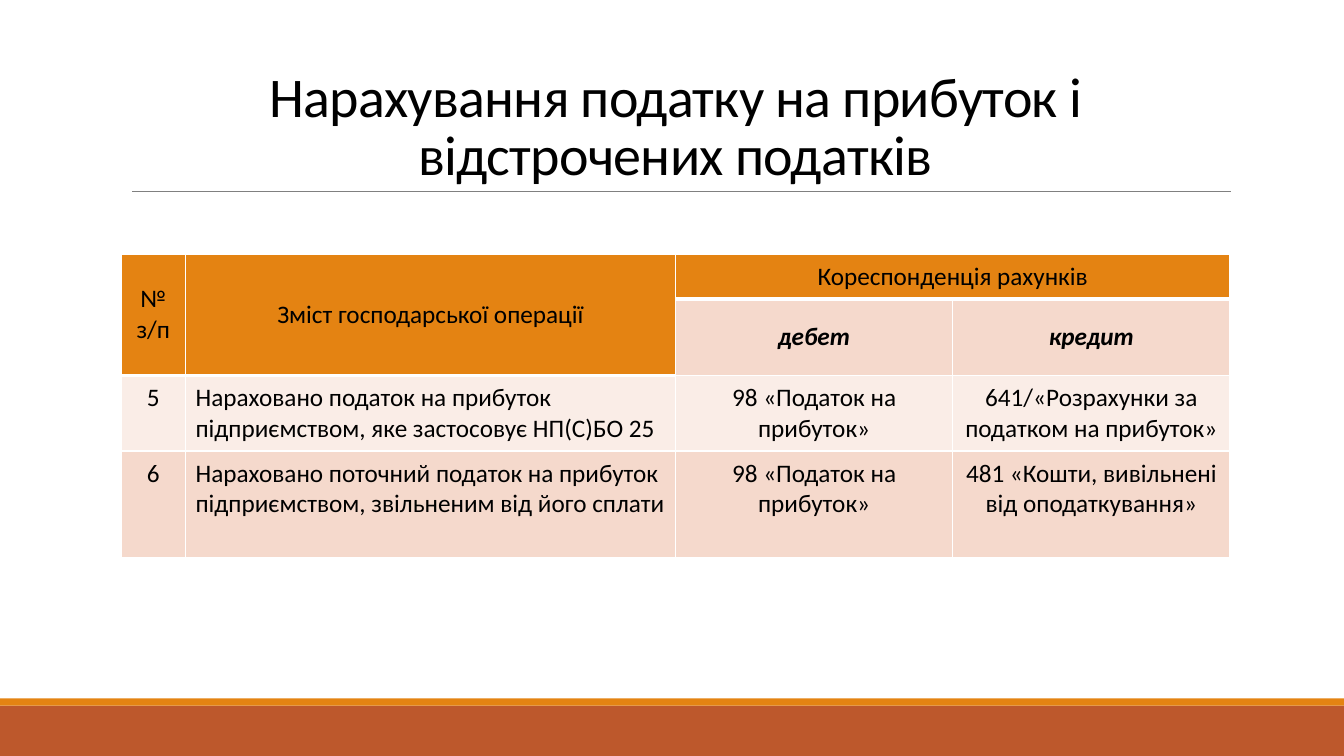
import pptx
import pptx.util
import pptx.dml.color
import pptx.enum.shapes
import pptx.enum.text
import pptx.oxml.ns
import lxml.etree

inch, pt = pptx.util.Inches, pptx.util.Pt
align, anchor = pptx.enum.text.PP_ALIGN, pptx.enum.text.MSO_ANCHOR
qn = pptx.oxml.ns.qn
wide, high = 13.33, 7.5
left, span = 1.2, 11
hues = {"rust": "BD582C", "gold": "E48312", "gray": "808080", "ink": "000000",
        "white": "FFFFFF", "rose": "F5D9CC", "pale": "FAEDE7"}


def tint(name):
    return pptx.dml.color.RGBColor.from_string(hues[name])


def write(para, text, size, side):
    para.alignment = side
    run = para.add_run()
    run.text = text
    run.font.name = "Calibri"
    run.font.size = pt(size)
    run.font.color.rgb = tint("ink")
    return run


deck = pptx.Presentation()
deck.slide_width, deck.slide_height = inch(wide), inch(high)
slide = deck.slides.add_slide(deck.slide_layouts[5])

# Bands at the foot
for top, tall, hue in [(7, 0.5, "rust"), (6.93, 0.07, "gold")]:
    band = slide.shapes.add_shape(pptx.enum.shapes.MSO_SHAPE.RECTANGLE,
                                  0, inch(top), inch(wide), inch(tall))
    band.shadow.inherit = False
    band.fill.solid()
    band.fill.fore_color.rgb = tint(hue)
    band.line.fill.background()

# Rule under the title
rule = slide.shapes.add_connector(pptx.enum.shapes.MSO_CONNECTOR.STRAIGHT,
                                  inch(1.31), inch(1.9), inch(12.21), inch(1.9))
rule.line.color.rgb = tint("gray")
rule.line.width = pt(0.5)
lxml.etree.SubElement(rule.element.spPr, qn("a:effectLst"))

# Title
title = slide.shapes.title
title.left, title.top, title.width, title.height = map(inch, (left, 0.31, span, 1.59))
frame = title.text_frame
frame.word_wrap = True
frame.auto_size = pptx.enum.text.MSO_AUTO_SIZE.NONE
frame.vertical_anchor = anchor.BOTTOM
frame.paragraphs[0].line_spacing = 0.85
run = write(frame.paragraphs[0], "Нарахування податку на прибуток і відстрочених податків",
            40, align.CENTER)
run.font._element.set("spc", "-50")

# Table of entries
rows = [
    ["№ з/п", "Зміст господарської операції", "Кореспонденція рахунків", ""],
    ["", "", "дебет", "кредит"],
    ["5", "Нараховано податок на прибуток підприємством, яке застосовує НП(С)БО 25",
     "98 «Податок на прибуток»", "641/«Розрахунки за податком на прибуток»"],
    ["6", "Нараховано поточний податок на прибуток підприємством, звільненим від його сплати",
     "98 «Податок на прибуток»", "481 «Кошти, вивільнені від оподаткування»"],
]
cols = [0.64, 4.86, 2.75, 2.75]
talls = [0.44, 0.76, 0.75, 1.06]
fills = ["gold", "rose", "pale", "rose"]
table = slide.shapes.add_table(len(rows), len(cols), inch(left), inch(2.52),
                               inch(span), inch(sum(talls))).table
for col, width in zip(table.columns, cols):
    col.width = inch(width)
for row, tall in zip(table.rows, talls):
    row.height = inch(tall)
for c in (0, 1):
    table.cell(0, c).merge(table.cell(1, c))
table.cell(0, 2).merge(table.cell(0, 3))

for r, row in enumerate(rows):
    for c, text in enumerate(row):
        cell = table.cell(r, c)
        head = r == 0 or (r == 1 and c < 2)
        below = r == 1 and c > 1 or r == 2 and c < 2
        cell.margin_left = cell.margin_right = inch(0.1)
        cell.margin_top = cell.margin_bottom = inch(0.07)
        cell.vertical_anchor = anchor.MIDDLE if r < 2 else anchor.TOP
        # White borders, thick under the heads
        edges = {"L": 1, "R": 1, "T": 3 if below else 1, "B": 3 if head else 1}
        props = cell._tc.get_or_add_tcPr()
        for edge, size in edges.items():
            line = lxml.etree.SubElement(props, qn("a:ln" + edge), w=str(pt(size)))
            paint = lxml.etree.SubElement(line, qn("a:solidFill"))
            lxml.etree.SubElement(paint, qn("a:srgbClr"), val=hues["white"])
        cell.fill.solid()
        cell.fill.fore_color.rgb = tint("gold" if head else fills[r])
        if text:
            side = align.LEFT if r > 1 and c == 1 else align.CENTER
            run = write(cell.text_frame.paragraphs[0], text, 18, side)
            run.font.bold = run.font.italic = r == 1

deck.save("out.pptx")
